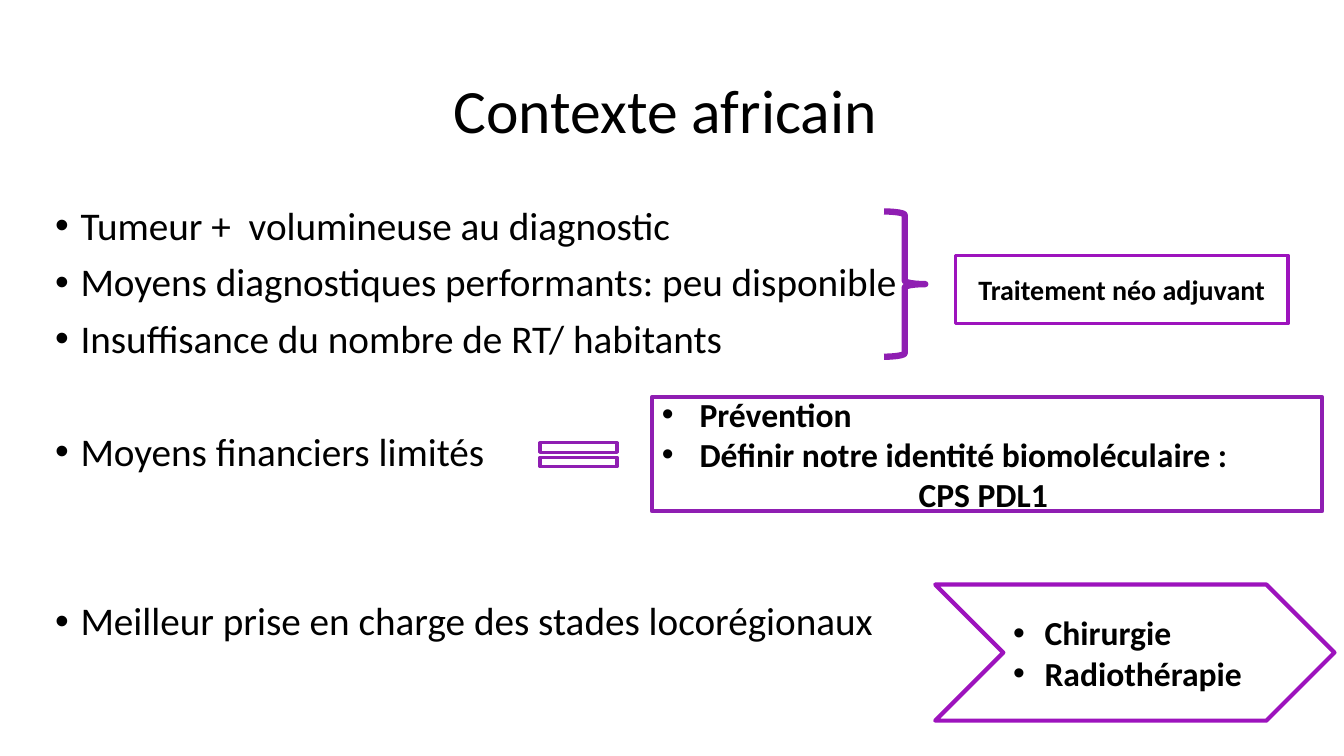
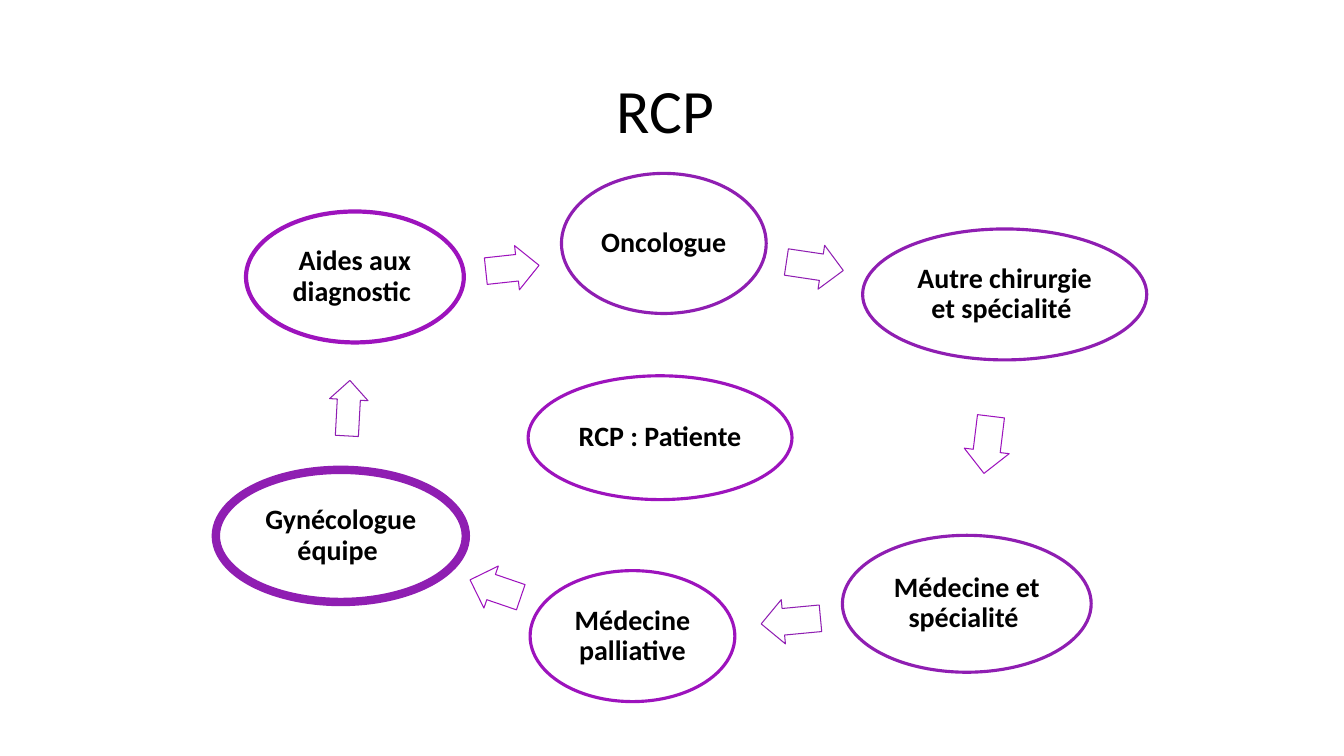
import pptx
import pptx.util
import pptx.dml.color
import pptx.enum.shapes
import pptx.enum.text
import pptx.oxml.ns
from lxml import etree

Cm, Pt = pptx.util.Cm, pptx.util.Pt
SHAPE = pptx.enum.shapes.MSO_SHAPE
ALIGN = pptx.enum.text.PP_ALIGN
MIDDLE = pptx.enum.text.MSO_ANCHOR.MIDDLE
TOP = pptx.enum.text.MSO_ANCHOR.TOP

COLORS = {"text": "000000", "violet": "8F1EB2", "plum": "9D13BD"}
FONT = "Calibri"
LABEL = {"size": Pt(20), "bold": True}
LIST = {"size": Pt(24), "bold": True}
TIGHT = {f"margin_{side}": Cm(0.08) for side in ("left", "right", "top", "bottom")}


def set_attributes(target, values):
    for name, value in values.items():
        setattr(target, name, value)


def rgb(name):
    return pptx.dml.color.RGBColor.from_string(COLORS[name])


class Deck:
    def __init__(self):
        self.presentation = pptx.Presentation()
        set_attributes(self.presentation,
                       {"slide_width": Cm(33.87), "slide_height": Cm(19.05)})
        self.slide = None

    def new_slide(self, title):
        layout = self.presentation.slide_layouts[6]
        self.slide = self.presentation.slides.add_slide(layout)
        frame = self.text_box((2.34, 1.02, 29.21, 3.68), MIDDLE)
        self.add_text(frame, title, {"size": Pt(44)}, {"line_spacing": 0.9})

    def text_box(self, box, anchor):
        frame = self.slide.shapes.add_textbox(*map(Cm, box)).text_frame
        set_attributes(frame, {"word_wrap": True, "vertical_anchor": anchor})
        return frame

    def outline(self, kind, box, color, width, rotation=0, adjustments=()):
        """Add an unfilled preset shape and return it."""
        shape = self.slide.shapes.add_shape(kind, *map(Cm, box))
        shape.shadow.inherit = False
        shape.fill.background()
        shape.line.color.rgb = rgb(color)
        shape.line.width = Pt(width)
        shape.rotation = rotation
        for index, value in enumerate(adjustments):
            shape.adjustments[index] = value
        set_attributes(shape.text_frame, {"word_wrap": True, "vertical_anchor": MIDDLE})
        return shape

    def add_text(self, frame, text, font, layout=None, indent=None):
        """Add one paragraph; an indent in cm makes it a bullet."""
        paragraph = frame.paragraphs[0]
        if paragraph.runs:
            paragraph = frame.add_paragraph()
        alignment = ALIGN.LEFT if indent else ALIGN.CENTER
        set_attributes(paragraph, {"alignment": alignment, **(layout or {})})
        run = paragraph.add_run()
        run.text = text
        set_attributes(run.font, {"name": FONT, **font})
        run.font.color.rgb = rgb("text")
        if indent:
            self.bullet(paragraph, Cm(indent))

    def bullet(self, paragraph, indent):
        properties = paragraph._p.get_or_add_pPr()
        properties.set("marL", str(indent))
        properties.set("indent", str(-indent))
        for tag, key, value in (("a:buFont", "typeface", "Arial"), ("a:buChar", "char", "•")):
            etree.SubElement(properties, pptx.oxml.ns.qn(tag)).set(key, value)

    def ellipse(self, text, box, color, width):
        frame = self.outline(SHAPE.OVAL, box, color, width).text_frame
        set_attributes(frame, TIGHT)
        self.add_text(frame, text, LABEL, {"line_spacing": 0.9})

    def arrow(self, box, rotation, color):
        self.outline(SHAPE.RIGHT_ARROW, box, color, 0.75, rotation, (0.6, 0.5))


def context_slide(deck):
    deck.new_slide("Contexte africain ")
    body = deck.text_box((1.14, 5.08, 30.4, 12.09), TOP)
    for text, space in (
        ("Tumeur +  volumineuse au diagnostic", 10),
        ("Moyens diagnostiques performants: peu disponible", 10),
        ("Insuffisance du nombre de RT/ habitants", 10),
        ("Moyens financiers limités", 50.5),
        ("Meilleur prise en charge des stades locorégionaux", 91),
    ):
        deck.add_text(body, text, {"size": Pt(28)},
                      {"line_spacing": 0.9, "space_before": Pt(space)}, 0.64)

    deck.outline(SHAPE.RIGHT_BRACE, (22.28, 5.33, 1.04, 3.66), "violet", 4.5)
    treatment = deck.outline(SHAPE.RECTANGLE, (24.08, 6.43, 8.38, 1.73), "plum", 2.25)
    deck.add_text(treatment.text_frame, "Traitement néo adjuvant", LABEL)

    deck.outline(SHAPE.MATH_EQUAL, (13.26, 10.95, 2.64, 1.02), "violet", 2.25)
    prevention = deck.outline(SHAPE.RECTANGLE, (16.43, 10.01, 16.89, 2.87), "violet", 3)
    for text in ("Prévention", "Définir notre identité biomoléculaire :"):
        deck.add_text(prevention.text_frame, text, LIST, indent=0.95)
    deck.add_text(prevention.text_frame, "CPS PDL1 ", LIST)

    care = deck.outline(SHAPE.CHEVRON, (23.57, 14.73, 10.06, 3.43), "plum", 3)
    for text in ("Chirurgie", "Radiothérapie"):
        deck.add_text(care.text_frame, text, LIST, indent=0.79)


def meeting_slide(deck):
    deck.new_slide("RCP ")
    for text, box, color, width in (
        ("Oncologue", (14.15, 4.37, 5.16, 3.53), "violet", 2.25),
        ("Autre chirurgie et spécialité ", (21.74, 5.77, 7.16, 3.3), "violet", 2.25),
        ("Médecine et spécialité ", (21.23, 13.49, 6.27, 3.45), "violet", 2.25),
        ("Médecine palliative", (13.36, 14.38, 5.16, 3.3), "plum", 2.25),
        ("Gynécologue équipe ", (5.44, 11.84, 6.3, 3.33), "violet", 6),
        ("Aides aux diagnostic ", (6.2, 5.33, 5.49, 3.3), "plum", 3),
        ("RCP : Patiente", (13.31, 9.47, 6.65, 3.12), "plum", 2.25),
    ):
        deck.ellipse(text, box, color, width)
    for box, rotation, color in (
        ((19.81, 6.15, 1.45, 1.12), 8.5, "violet"),
        ((24.16, 10.64, 1.45, 1.14), 97, "plum"),
        ((19.18, 15.09, 1.5, 1.12), 174.6, "violet"),
        ((11.81, 14.27, 1.35, 1.12), 198.9, "plum"),
        ((8.08, 9.8, 1.4, 0.97), 273.1, "violet"),
        ((12.24, 6.2, 1.35, 1.12), 353.8, "plum"),
    ):
        deck.arrow(box, rotation, color)


def main():
    deck = Deck()
    context_slide(deck)
    meeting_slide(deck)
    deck.presentation.save("out.pptx")


if __name__ == "__main__":
    main()
